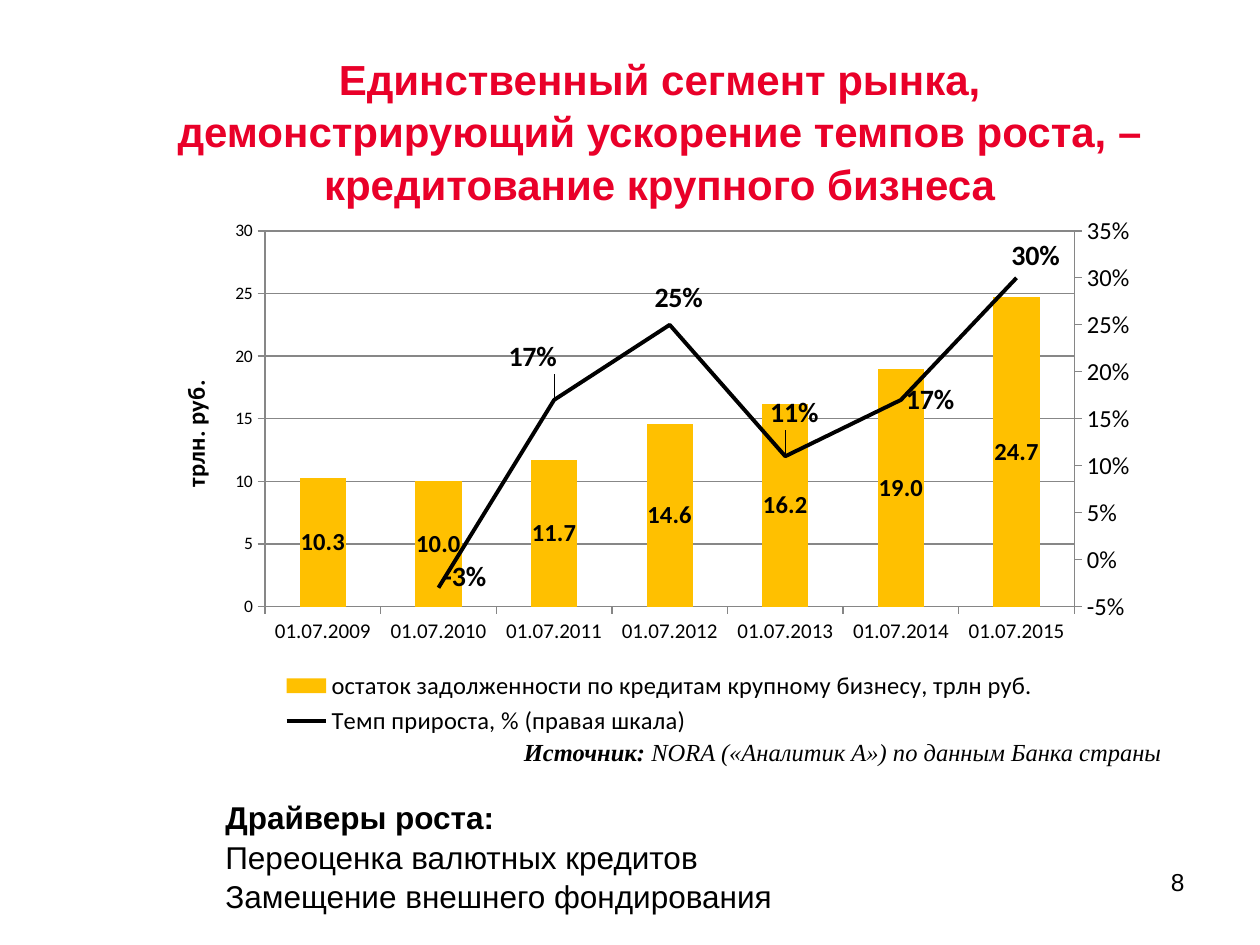
"""Build the slide on lending to large businesses."""
from copy import deepcopy
from dataclasses import dataclass

from lxml.etree import SubElement
from pptx import Presentation
from pptx.chart.axis import CategoryAxis, ValueAxis
from pptx.chart.data import CategoryChartData
from pptx.dml.color import RGBColor
from pptx.enum.chart import XL_CHART_TYPE as ChartType, XL_LABEL_POSITION as LabelPos
from pptx.enum.chart import XL_LEGEND_POSITION as LegendPos, XL_MARKER_STYLE as Marker
from pptx.enum.chart import XL_TICK_MARK as Tick
from pptx.enum.text import MSO_ANCHOR as Anchor, PP_ALIGN as Align
from pptx.oxml import parse_xml
from pptx.oxml.ns import nsdecls, qn
from pptx.util import Inches, Pt


@dataclass(frozen=True)
class Theme:
    red: str = "E90029"
    black: str = "000000"
    amber: str = "FFC000"
    grey: str = "868686"
    sans: str = "Arial"
    serif: str = "Times New Roman"
    chart: str = "Calibri"
    title: int = 24
    body: int = 18
    rate: int = 16
    small: int = 14
    dates: int = 12
    leading: float = 1.05


THEME = Theme()
WIDTH, HEIGHT = 10, 7.5
TITLE = "Единственный сегмент рынка, демонстрирующий ускорение темпов роста, – кредитование крупного бизнеса"
YEARS = range(2009, 2016)
DEBT = ("остаток задолженности по кредитам крупному бизнесу, трлн руб.", (10.3, 10, 11.7, 14.6, 16.2, 19, 24.7))
GROWTH = ("Темп прироста, % (правая шкала)", (None, -0.03, 0.17, 0.25, 0.11, 0.17, 0.3))
RATE_SHIFTS = {1: (0, -0.02), 2: (-0.05, -0.08), 3: (-0.02, -0.05), 4: (-0.02, -0.08), 6: (-0.01, -0.04)}
UNIT = "трлн. руб."
SOURCE = [[("Источник: ", True), ("NORA («Аналитик А») по данным Банка страны", False)]]
DRIVERS = [[("Драйверы роста:", True)], [("Переоценка валютных кредитов", False)],
           [("Замещение внешнего фондирования", False)]]
PAGE = [[("8", False)]]
BOXES = {
    "title": (0.114, 0.09, 0.819, 0.095),
    "page": (0.717, 0.911, 0.233, 0.069),
    "chart": (0.114, 0.216, 0.803, 0.568),
    "source": (0.406, 0.773, 0.59, 0.045),
    "drivers": (0.169, 0.836, 0.669, 0.135),
}


def place(key):
    return [Inches(share * side) for share, side in zip(BOXES[key], (WIDTH, HEIGHT) * 2)]


def style(font, size, name=THEME.chart, color=THEME.black, **flags):
    values = {"size": Pt(size), "name": name, "bold": False, **flags}
    for attribute, value in values.items():
        setattr(font, attribute, value)
    font.color.rgb = RGBColor.from_string(color)


def add_text(slide, key, paragraphs, size, name, align=Align.LEFT, leading=None, **flags):
    frame = slide.shapes.add_textbox(*place(key)).text_frame
    frame.word_wrap = True
    for index, runs in enumerate(paragraphs):
        paragraph = frame.add_paragraph() if index else frame.paragraphs[0]
        paragraph.alignment, paragraph.line_spacing = align, leading
        for text, bold in runs:
            run = paragraph.add_run()
            run.text = text
            style(run.font, size, name, bold=bold, **flags)


def layout(target=None, mode="edge", **shares):
    root = parse_xml(f"<c:layout {nsdecls('c')}/>")
    manual = SubElement(root, qn("c:manualLayout"))
    settings = {"layoutTarget": target} if target else {}
    if mode:
        settings |= {"xMode": mode, "yMode": mode}
    for tag, value in (settings | shares).items():
        SubElement(manual, qn(f"c:{tag}"), val=str(value))
    return root


def drop(parent, tag):
    for child in parent.findall(qn(tag)):
        parent.remove(child)


def move_growth_to_right(area):
    bars = area.find(qn("c:barChart"))
    growth = bars.findall(qn("c:ser"))[1]
    drop(growth, "c:invertIfNegative")
    lines = parse_xml(f'<c:lineChart {nsdecls("c")}><c:grouping val="standard"/>'
                      '<c:varyColors val="0"/></c:lineChart>')
    lines.append(growth)
    ids = {"catAx": "5001", "valAx": "5002"}
    for tag, value in (("marker", "1"), ("axId", ids["catAx"]), ("axId", ids["valAx"])):
        SubElement(lines, qn(f"c:{tag}"), val=value)
    bars.addnext(lines)
    copies = {}
    last = area.find(qn("c:valAx"))
    for tag, other in (("valAx", "catAx"), ("catAx", "valAx")):
        axis = deepcopy(area.find(qn(f"c:{tag}")))
        axis.find(qn("c:axId")).set("val", ids[tag])
        axis.find(qn("c:crossAx")).set("val", ids[other])
        last.addnext(axis)
        last = copies[tag] = axis
    CategoryAxis(copies["catAx"]).visible = False
    copies["valAx"].find(qn("c:axPos")).set("val", "r")
    copies["valAx"].find(qn("c:crosses")).set("val", "max")
    return ValueAxis(copies["valAx"])


def format_axis(axis, size, scale=None, number_format=None):
    axis.major_tick_mark, axis.minor_tick_mark = Tick.OUTSIDE, Tick.NONE
    style(axis.tick_labels.font, size)
    axis.format.line.color.rgb = RGBColor.from_string(THEME.grey)
    if scale:
        axis.minimum_scale, axis.maximum_scale, axis.major_unit = scale
        axis.tick_labels.number_format = number_format
        axis.tick_labels.number_format_is_linked = False


def label_series(series, size, number_format, position):
    labels = series.data_labels
    settings = {"show_value": True, "number_format": number_format,
                "number_format_is_linked": False, "position": position}
    for attribute, value in settings.items():
        setattr(labels, attribute, value)
    style(labels.font, size, bold=True)


def add_chart(slide):
    data = CategoryChartData()
    data.categories = [f"01.07.{year}" for year in YEARS]
    for name, values in (DEBT, GROWTH):
        data.add_series(name, values)
    chart = slide.shapes.add_chart(ChartType.COLUMN_CLUSTERED, *place("chart"), data).chart
    style(chart.font, 10)
    chart.has_title = False
    area = chart.element.find(f".//{qn('c:plotArea')}")
    right = move_growth_to_right(area)
    right.has_major_gridlines = False
    left = chart.value_axis
    format_axis(chart.category_axis, THEME.dates)
    format_axis(left, THEME.small, (0, 30, 5), "0")
    format_axis(right, THEME.small, (-0.05, 0.35, 0.05), "0%")
    left.major_gridlines.format.line.color.rgb = RGBColor.from_string(THEME.grey)
    unit = left.axis_title.text_frame
    unit.text = UNIT
    style(unit.paragraphs[0].runs[0].font, THEME.small, bold=True)
    title = left.axis_title._element
    drop(title, "c:layout")
    title.find(qn("c:tx")).addnext(layout(x=0.03, y=0.32))

    bars, lines = chart.plots
    bars.gap_width, bars.vary_by_categories = 150, False
    debt, growth = bars.series[0], lines.series[0]
    debt.format.fill.solid()
    debt.format.fill.fore_color.rgb = RGBColor.from_string(THEME.amber)
    growth.format.line.color.rgb = RGBColor.from_string(THEME.black)
    growth.format.line.width = Pt(2.25)
    growth.marker.style, growth.smooth = Marker.NONE, False
    label_series(debt, THEME.small, "#,##0.0", LabelPos.CENTER)
    label_series(growth, THEME.rate, "0%", LabelPos.RIGHT)
    for point in RATE_SHIFTS:
        label = growth.points[point].data_label
        label.position = LabelPos.RIGHT
        style(label.font, THEME.rate, bold=True)
    for element in growth.data_labels._element.findall(qn("c:dLbl")):
        index = element.find(qn("c:idx"))
        x, y = RATE_SHIFTS[int(index.get("val"))]
        index.addnext(parse_xml(f'<c:numFmt {nsdecls("c")} formatCode="0%" sourceLinked="0"/>'))
        index.addnext(layout(mode=None, x=x, y=y))

    chart.has_legend = True
    legend = chart.legend
    legend.position, legend.include_in_layout = LegendPos.BOTTOM, False
    style(legend.font, THEME.small)
    drop(legend._element, "c:layout")
    legend._element.find(qn("c:legendPos")).addnext(layout(x=0.12, y=0.86, w=0.78, h=0.14))
    drop(area, "c:layout")
    area.insert(0, layout("inner", x=0.12, y=0.05, w=0.8, h=0.7))


def main():
    deck = Presentation()
    deck.slide_width, deck.slide_height = Inches(WIDTH), Inches(HEIGHT)
    slide = deck.slides.add_slide(deck.slide_layouts[5])
    heading = slide.shapes.title
    heading.left, heading.top, heading.width, heading.height = place("title")
    heading.text_frame.text = TITLE
    heading.text_frame.vertical_anchor = Anchor.MIDDLE
    paragraph = heading.text_frame.paragraphs[0]
    paragraph.alignment, paragraph.line_spacing = Align.CENTER, THEME.leading
    style(paragraph.runs[0].font, THEME.title, THEME.sans, THEME.red, bold=True)
    add_text(slide, "page", PAGE, THEME.small, THEME.sans, Align.RIGHT)
    add_chart(slide)
    add_text(slide, "source", SOURCE, THEME.small, THEME.serif, italic=True)
    add_text(slide, "drivers", DRIVERS, THEME.body, THEME.sans, leading=THEME.leading)
    deck.save("out.pptx")


if __name__ == "__main__":
    main()
